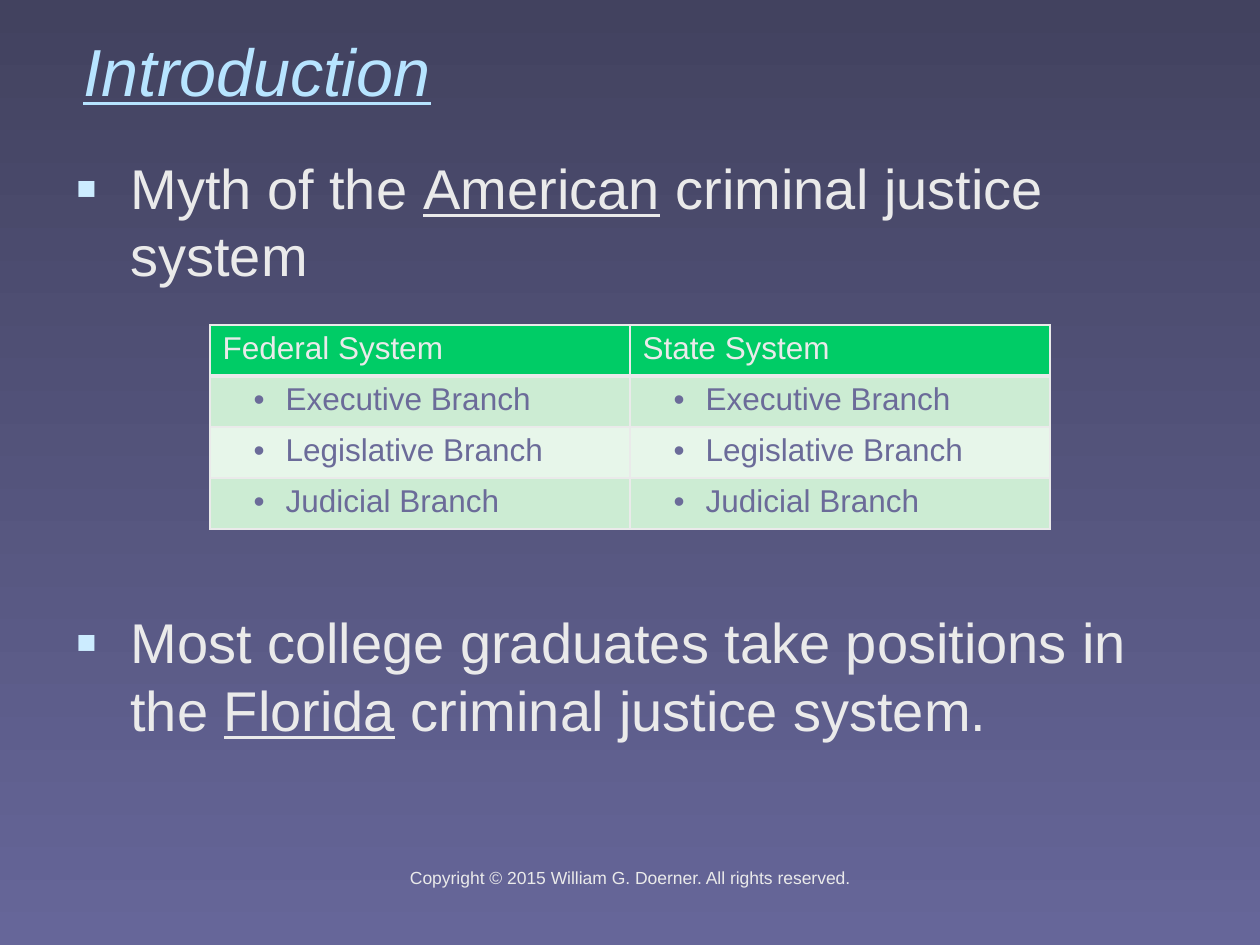
from pptx import Presentation
from pptx.dml.color import RGBColor
from pptx.enum.text import MSO_ANCHOR, PP_ALIGN
from pptx.oxml.ns import qn
from pptx.util import Emu, Pt
from lxml.etree import SubElement

PX = 914400 // 126
FONT = "Arial"
COLORS = {
    "sky_top": "42425F", "sky_bottom": "666699", "title": "B7E4FF",
    "text": "EAEAEA", "marker": "CCECFF", "header": "00CC66",
    "band": "CCECD3", "light": "E7F6EA", "cell_text": "6B6B99",
}

TITLE = "Introduction"
# Each point is a list of (text, underlined) spans.
POINTS = [
    [("Myth of the ", False), ("American", True), (" criminal justice system", False)],
    [("Most college graduates take positions in the ", False), ("Florida", True),
     (" criminal justice system.", False)],
]
TABLE_GAP = 183  # points left between the two points for the table
BRANCHES = ["Executive Branch", "Legislative Branch", "Judicial Branch"]
SYSTEMS = {"Federal System": BRANCHES, "State System": BRANCHES}
COPYRIGHT = "Copyright © 2015 William G. Doerner. All rights reserved."

TABLE_LEFT, TABLE_TOP, COLUMN_WIDTH, ROW_HEIGHT = 210, 325, 420, 51


def px(*lengths):
    return [Emu(length * PX) for length in lengths]


def rgb(name):
    return RGBColor.from_string(COLORS[name])


def add_text(para, text, size, color="text", italic=False, underline=False):
    span = para.add_run()
    span.text = text
    font = span.font
    font.name, font.size, font.bold = FONT, Pt(size), False
    font.italic, font.underline = italic, underline
    font.color.rgb = rgb(color)


def add_box(page, *place, anchor=MSO_ANCHOR.TOP):
    frame = page.shapes.add_textbox(*px(*place)).text_frame
    frame.word_wrap = True
    frame.vertical_anchor = anchor
    return frame


def set_indent(para, left, hanging=0):
    props = para._p.get_or_add_pPr()
    props.set("marL", str(left * PX))
    props.set("indent", str(-hanging * PX))
    return props


def set_bullet(para, char, left, hanging, color=None, percent=100):
    props = set_indent(para, left, hanging)
    if color:
        SubElement(SubElement(props, qn("a:buClr")), qn("a:srgbClr"), val=COLORS[color])
    SubElement(props, qn("a:buSzPct"), val=str(percent * 1000))
    SubElement(props, qn("a:buFont"), typeface=FONT)
    SubElement(props, qn("a:buChar"), char=char)


def set_borders(cell, bottom=1):
    props = cell._tc.get_or_add_tcPr()
    widths = {"a:lnL": 1, "a:lnR": 1, "a:lnT": 1, "a:lnB": bottom}
    for position, (tag, width) in enumerate(widths.items()):
        line = SubElement(props, qn(tag), w=str(Pt(width)))
        SubElement(SubElement(line, qn("a:solidFill")), qn("a:srgbClr"), val=COLORS["text"])
        props.insert(position, line)  # borders come before the fill


def add_systems_table(page):
    rows, columns = len(BRANCHES) + 1, len(SYSTEMS)
    table = page.shapes.add_table(
        rows, columns, *px(TABLE_LEFT, TABLE_TOP, columns * COLUMN_WIDTH, rows * ROW_HEIGHT)).table
    for row in table.rows:
        row.height = Emu(ROW_HEIGHT * PX)
    for c, (system, branches) in enumerate(SYSTEMS.items()):
        table.columns[c].width = Emu(COLUMN_WIDTH * PX)
        for r, text in enumerate([system, *branches]):
            cell = table.cell(r, c)
            is_header = r == 0
            fill = "header" if is_header else ("band" if r % 2 else "light")
            cell.fill.solid()
            cell.fill.fore_color.rgb = rgb(fill)
            set_borders(cell, bottom=3 if is_header else 1)
            para = cell.text_frame.paragraphs[0]
            if not is_header:
                set_bullet(para, "•", 63, 32)
            add_text(para, text, 18, "text" if is_header else "cell_text")


def main():
    deck = Presentation()
    deck.slide_width, deck.slide_height = px(1260, 945)
    page = deck.slides.add_slide(deck.slide_layouts[6])

    sky = page.background.fill
    sky.gradient()
    sky.gradient_angle = 270
    for stop, name in zip(sky.gradient_stops, ("sky_top", "sky_bottom")):
        stop.color.rgb = rgb(name)

    title = add_box(page, 63, 35, 1134, 81, anchor=MSO_ANCHOR.BOTTOM).paragraphs[0]
    set_indent(title, 8)
    add_text(title, TITLE, 38, "title", italic=True, underline=True)

    body = add_box(page, 63, 147, 1134, 703)
    for number, spans in enumerate(POINTS):
        para = body.add_paragraph() if number else body.paragraphs[0]
        para.space_before = Pt(TABLE_GAP * number)
        set_bullet(para, "▪", 55, 55, "marker", 115)
        for text, underlined in spans:
            add_text(para, text, 32, underline=underlined)

    add_systems_table(page)

    footer = add_box(page, 378, 861, 504, 65).paragraphs[0]
    footer.alignment = PP_ALIGN.CENTER
    add_text(footer, COPYRIGHT, 10)

    deck.save("out.pptx")


if __name__ == "__main__":
    main()
